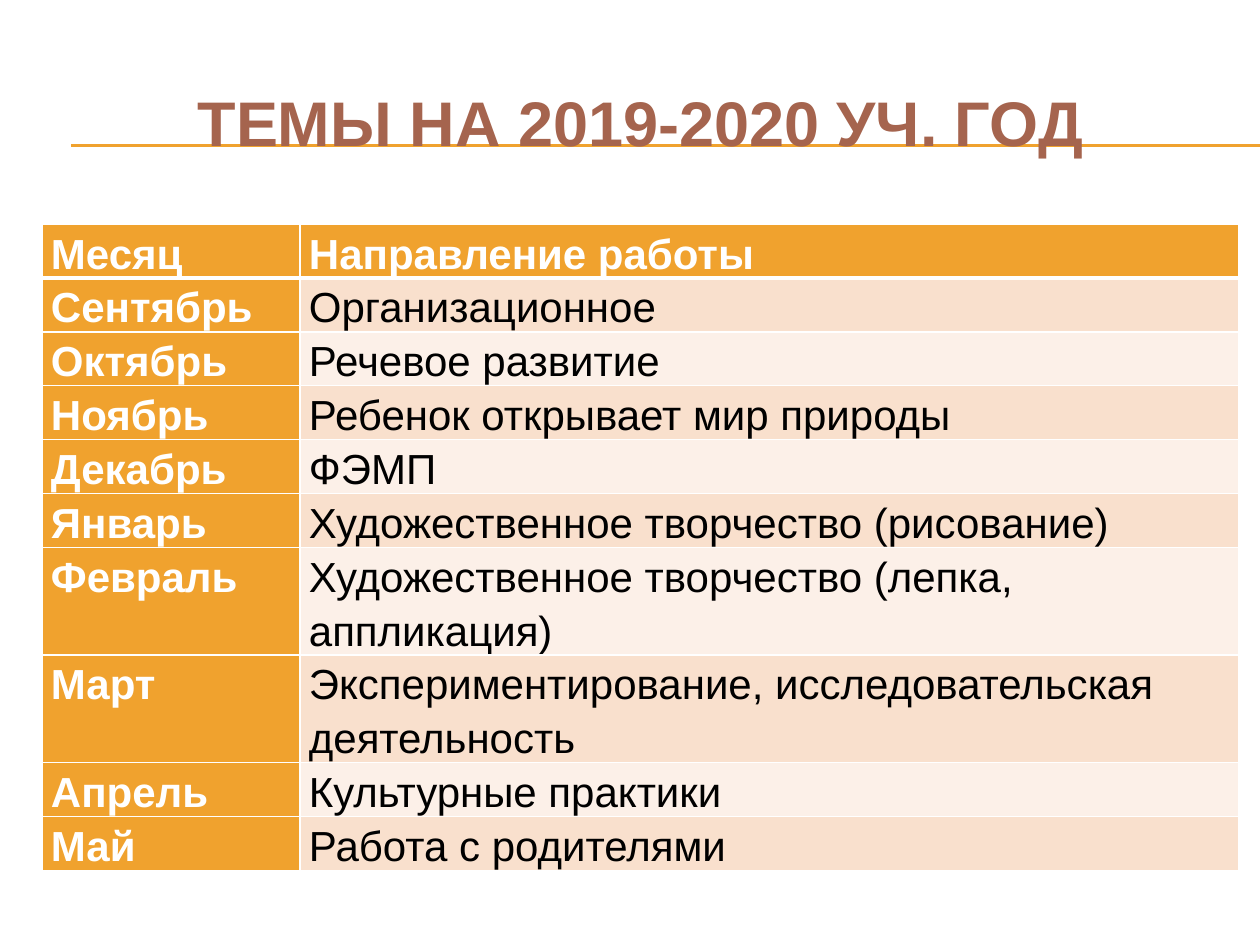
from dataclasses import dataclass

from lxml.etree import SubElement
from pptx import Presentation
from pptx.dml.color import RGBColor as RGB
from pptx.enum.shapes import MSO_CONNECTOR as CONN
from pptx.enum.text import MSO_ANCHOR as ANCHOR, PP_ALIGN as ALIGN
from pptx.oxml import parse_xml
from pptx.oxml.ns import nsdecls, qn
from pptx.util import Emu, Pt


@dataclass(frozen=True)
class Theme:
    """Colours, font and type sizes of the slide."""
    font: str = "Arial"
    title: str = "A5644E"
    accent: str = "F0A22E"
    light: str = "FFFFFF"
    dark: str = "000000"
    bands: tuple = ("F9E0CD", "FCF0E8")
    title_size: int = 36
    cell_size: int = 24


THEME = Theme()
TITLE = "ТЕМЫ НА 2019-2020 УЧ. ГОД"
ROWS = [
    ("Месяц", "Направление работы"),
    ("Сентябрь", "Организационное"),
    ("Октябрь", "Речевое развитие"),
    ("Ноябрь", "Ребенок открывает мир природы"),
    ("Декабрь", "ФЭМП"),
    ("Январь", "Художественное творчество (рисование)"),
    ("Февраль", "Художественное творчество (лепка, аппликация)"),
    ("Март", "Экспериментирование, исследовательская деятельность"),
    ("Апрель", "Культурные практики"),
    ("Май", "Работа с родителями"),
]


def px(n):
    """Turn pixels into EMU."""
    return Emu(round(n * 914400 / 126))


def set_attrs(obj, values):
    """Set each named attribute of an object."""
    for name, value in values.items():
        setattr(obj, name, value)


def write(tf, text, size, color, bold, **para):
    """Write one formatted run into a text frame."""
    p = tf.paragraphs[0]
    set_attrs(p, para)
    r = p.add_run()
    r.text = text
    set_attrs(r.font, {"name": THEME.font, "size": Pt(size), "bold": bold})
    r.font.color.rgb = RGB.from_string(color)


def add_title(s, text):
    """Place and format the title placeholder."""
    sp = s.shapes.title
    set_attrs(sp, {"left": px(42), "top": px(63), "width": px(1197), "height": px(116)})
    set_attrs(sp.text_frame, {"word_wrap": True, "vertical_anchor": ANCHOR.MIDDLE})
    write(sp.text_frame, text, THEME.title_size, THEME.title, True, alignment=ALIGN.CENTER)


def add_rule(s, y):
    """Draw a thin horizontal rule behind the title."""
    sp = s.shapes.add_connector(CONN.STRAIGHT, px(71), px(y), px(1260), px(y))
    sp.line.color.rgb = RGB.from_string(THEME.accent)
    sp.line.width = Pt(0.75)
    SubElement(sp._element.spPr, qn("a:effectLst"))
    s.shapes._spTree.insert(2, sp._element)


def set_borders(cell, widths):
    """Give a cell light borders of the given widths by side."""
    tc_pr = cell._tc.get_or_add_tcPr()
    for i, (side, width) in enumerate(widths.items()):
        tc_pr.insert(i, parse_xml(
            f'<a:ln{side} {nsdecls("a")} w="{Pt(width)}"><a:solidFill>'
            f'<a:srgbClr val="{THEME.light}"/></a:solidFill></a:ln{side}>'))


def fill_cell(cell, text, row, col):
    """Write and format one table cell."""
    strong = row == 0 or col == 0
    set_attrs(cell, {"margin_left": px(9), "margin_right": px(9),
                     "margin_top": 0, "margin_bottom": 0})
    write(cell.text_frame, text, THEME.cell_size,
          THEME.light if strong else THEME.dark, strong, line_spacing=1.15)
    cell.fill.solid()
    color = THEME.accent if strong else THEME.bands[(row - 1) % 2]
    cell.fill.fore_color.rgb = RGB.from_string(color)
    set_borders(cell, {"L": 1, "R": 1, "T": 3 if row == 1 else 1, "B": 3 if row == 0 else 1})


def add_table(s, rows, widths, row_height):
    """Add the table of months and topics."""
    frame = s.shapes.add_table(len(rows), len(widths), px(42), px(224),
                               px(sum(widths)), px(row_height * len(rows)))
    table = frame.table
    set_attrs(table, {"first_row": True, "first_col": True, "horz_banding": True})
    for column, width in zip(table.columns, widths):
        column.width = px(width)
    for i, texts in enumerate(rows):
        table.rows[i].height = px(row_height)
        for j, text in enumerate(texts):
            fill_cell(table.cell(i, j), text, i, j)


def main():
    """Build and save the slide."""
    prs = Presentation()
    set_attrs(prs, {"slide_width": px(1260), "slide_height": px(945)})
    s = prs.slides.add_slide(prs.slide_layouts[5])
    add_title(s, TITLE)
    for y in (145, 146):
        add_rule(s, y)
    add_table(s, ROWS, (258, 939), 43)
    prs.save("out.pptx")


if __name__ == "__main__":
    main()
